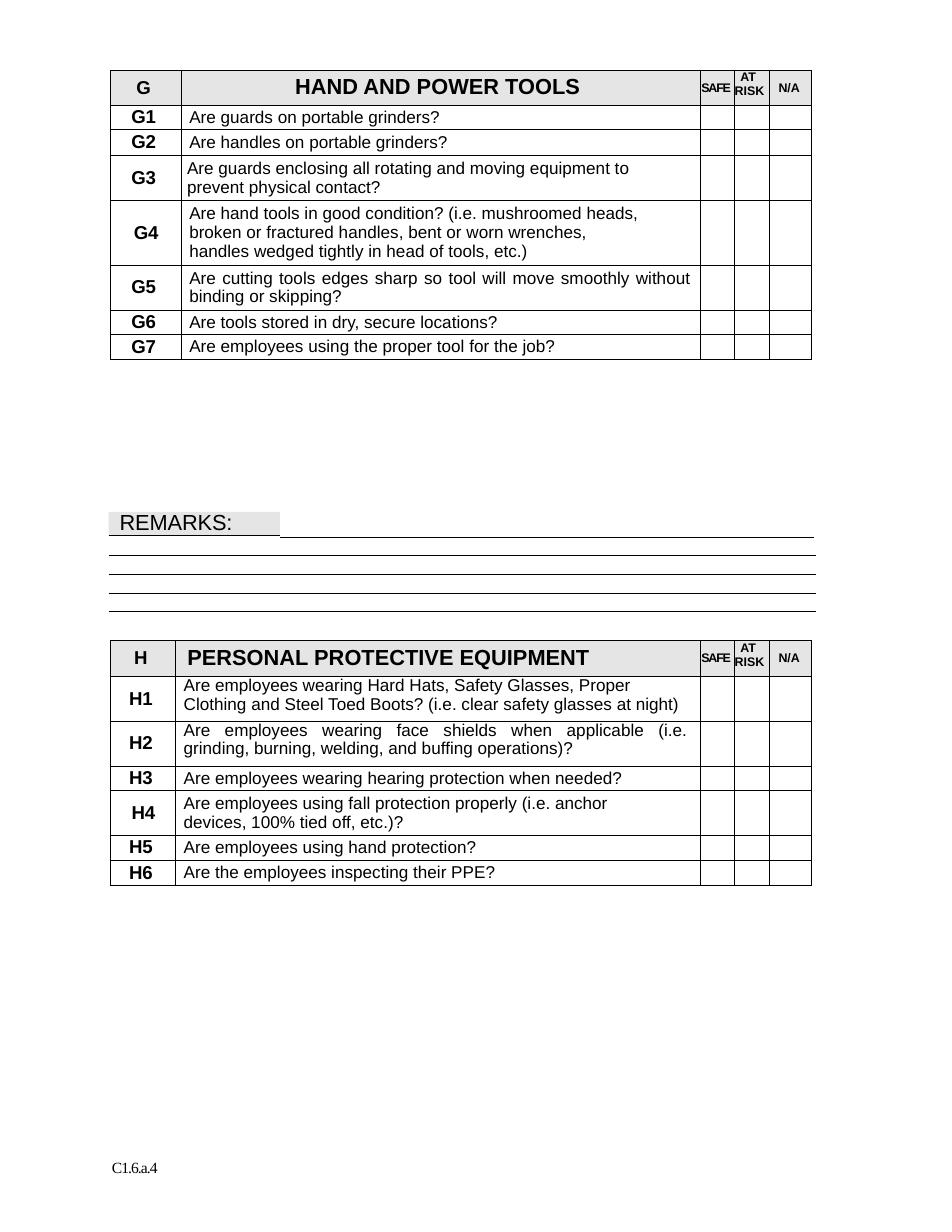
"""Build a safety checklist page with two inspection tables and a remarks area."""
from dataclasses import dataclass

from lxml import etree
from pptx import Presentation
from pptx import util as u
from pptx.dml.color import RGBColor
from pptx.enum import shapes, text
from pptx.oxml.ns import qn

COLS, ROWS = 850, 1100
ALIGN, ANCHOR = text.PP_ALIGN, text.MSO_ANCHOR


@dataclass(frozen=True)
class Style:
    size: float
    leading: float
    bold: bool = False
    spacing: float = 0
    font: str = "Arial"


@dataclass(frozen=True)
class Theme:
    ink: RGBColor = RGBColor(0, 0, 0)
    shade: RGBColor = RGBColor(0xE5, 0xE5, 0xE5)
    rule: float = 0.7
    code: Style = Style(12, 13, True, -0.2)
    title: Style = Style(14, 15, True)
    safe: Style = Style(8, 9, True, -0.8)
    risk: Style = Style(8, 9, True)
    na: Style = Style(8, 9, True, -0.1)
    question: Style = Style(11, 12)
    remarks: Style = Style(14, 14, spacing=-0.1)
    footer: Style = Style(10, 11, spacing=-0.6, font="Times New Roman")


@dataclass(frozen=True)
class Item:
    code: str
    question: str
    height: int = 22
    right: int = 0
    left: int = 7
    align: ALIGN = ALIGN.LEFT
    anchor: ANCHOR = ANCHOR.MIDDLE


@dataclass(frozen=True)
class Section:
    top: int
    code: str
    title: str
    title_align: ALIGN
    title_right: int
    header: int
    code_width: int
    items: tuple[Item, ...]


THEME = Theme()
TABLE_LEFT, TABLE_WIDTH, CHECK_WIDTHS = 99, 626, (31, 31, 38)
SECTIONS = (
    Section(63, "G ", "HAND AND POWER TOOLS ", ALIGN.CENTER, 0, 31, 63, (
        Item("G1 ", "Are guards on portable grinders?"),
        Item("G2 ", "Are handles on portable grinders?", 23),
        Item("G3 ", "Are guards enclosing all rotating and moving equipment to\n"
             "prevent physical contact?", 40, left=5),
        Item("G4", "Are hand tools in good condition? (i.e. mushroomed heads, broken or "
             "fractured handles, bent or worn wrenches, handles wedged tightly in head "
             "of tools, etc.)", 58, 50),
        Item("G5 ", "Are cutting tools edges sharp so tool will move smoothly without "
             "binding or skipping? ", 40, 8, align=ALIGN.JUSTIFY),
        Item("G6 ", "Are tools stored in dry, secure locations?"),
        Item("G7 ", "Are employees using the proper tool for the job?"))),
    Section(572, "H ", "PERSONAL PROTECTIVE EQUIPMENT ", ALIGN.RIGHT, 93, 32, 58, (
        Item("H1 ", "Are employees wearing Hard Hats, Safety Glasses, Proper Clothing and "
             "Steel Toed Boots? (i.e. clear safety glasses at night)", 40, 15,
             anchor=ANCHOR.TOP),
        Item("H2 ", "Are employees wearing face shields when applicable (i.e. grinding, "
             "burning, welding, and buffing operations)? ", 40, 11,
             align=ALIGN.JUSTIFY, anchor=ANCHOR.TOP),
        Item("H3 ", "Are employees wearing hearing protection when needed?"),
        Item("H4", "Are employees using fall protection properly (i.e. anchor devices, "
             "100% tied off, etc.)?", 40, 40),
        Item("H5 ", "Are employees using hand protection?"),
        Item("H6 ", "Are the employees inspecting their PPE?", 23))),
)
RULES = [(97, 729, row) for row in (496, 513, 530, 546)] + [(250, 727, 480), (97, 250, 478)]


def grid(units: float) -> u.Emu:
    """Return the length of a number of grid steps."""
    return u.Inches(units * 8.5 / COLS)


def write(tf, content: str, style: Style, align: ALIGN = ALIGN.LEFT) -> None:
    """Fill a text frame with text in one style."""
    tf.text = content
    tf.word_wrap = True
    for p in tf.paragraphs:
        p.alignment, p.line_spacing = align, u.Pt(style.leading)
        for r in p.runs:
            r.font.name, r.font.size, r.font.bold = style.font, u.Pt(style.size), style.bold
            r.font.color.rgb = THEME.ink
            r._r.get_or_add_rPr().set("spc", str(round(style.spacing * 100)))


def add_borders(cell) -> None:
    """Give a cell a thin line on all four sides."""
    tc_pr = cell._tc.get_or_add_tcPr()
    for side in ("lnL", "lnR", "lnT", "lnB"):
        ln = etree.SubElement(tc_pr, qn(f"a:{side}"), w=str(u.Pt(THEME.rule)))
        fill = etree.SubElement(ln, qn("a:solidFill"))
        etree.SubElement(fill, qn("a:srgbClr"), val=str(THEME.ink))


def fill_cell(cell, content: str, style: Style, align: ALIGN = ALIGN.CENTER,
              anchor: ANCHOR = ANCHOR.MIDDLE, left: int = 0, right: int = 0) -> None:
    """Write and place the text of one cell."""
    write(cell.text_frame, content, style, align)
    cell.vertical_anchor = anchor
    cell.margin_left, cell.margin_right = grid(left), grid(right)


def draw_section(s, section: Section) -> None:
    """Draw one checklist table."""
    heights = [section.header] + [item.height for item in section.items]
    widths = [section.code_width, TABLE_WIDTH - section.code_width - sum(CHECK_WIDTHS),
              *CHECK_WIDTHS]
    table = s.shapes.add_table(len(heights), len(widths), grid(TABLE_LEFT), grid(section.top),
                               grid(TABLE_WIDTH), grid(sum(heights))).table
    table.first_row = table.horz_banding = False
    for column, width in zip(table.columns, widths):
        column.width = grid(width)
    for i, (row, height) in enumerate(zip(table.rows, heights)):
        row.height = grid(height)
        for cell in row.cells:
            cell.margin_left = cell.margin_right = cell.margin_top = cell.margin_bottom = 0
            add_borders(cell)
            if i == 0:
                cell.fill.solid()
                cell.fill.fore_color.rgb = THEME.shade
            else:
                cell.fill.background()
    code, title, safe, risk, na = table.rows[0].cells
    fill_cell(code, section.code, THEME.code)
    fill_cell(title, section.title, THEME.title, section.title_align, right=section.title_right)
    fill_cell(safe, "SAFE ", THEME.safe)
    fill_cell(risk, "AT RISK", THEME.risk, ALIGN.LEFT, ANCHOR.TOP)
    risk.text_frame.paragraphs[0]._p.get_or_add_pPr().set("indent", str(grid(5)))
    fill_cell(na, "N/A ", THEME.na)
    for i, item in enumerate(section.items, 1):
        code, question, *checks = table.rows[i].cells
        fill_cell(code, item.code, THEME.code)
        fill_cell(question, item.question, THEME.question, item.align, item.anchor,
                  item.left, item.right)
        for cell in checks:
            p = cell.text_frame.paragraphs[0]
            etree.SubElement(p._p, qn("a:endParaRPr"), sz=str(THEME.risk.size * 100))


def draw_label(s, box: tuple[int, ...], content: str, style: Style, left: int = 0,
               shaded: bool = False) -> None:
    """Draw a line of text, with a shaded ground if asked."""
    sp = s.shapes.add_textbox(*map(grid, box))
    tf = sp.text_frame
    write(tf, content, style)
    tf.margin_left, tf.margin_top = grid(left), grid(1)
    tf.margin_right = tf.margin_bottom = 0
    if shaded:
        sp.fill.solid()
        sp.fill.fore_color.rgb = THEME.shade


def draw_rule(s, start: int, end: int, row: int) -> None:
    """Draw one horizontal writing line."""
    line = s.shapes.add_connector(shapes.MSO_CONNECTOR.STRAIGHT, grid(start), grid(row),
                                  grid(end), grid(row))
    line.line.color.rgb, line.line.width = THEME.ink, u.Pt(THEME.rule)
    etree.SubElement(line._element.spPr, qn("a:effectLst"))


def main() -> None:
    """Build the page and save it."""
    prs = Presentation()
    prs.slide_width, prs.slide_height = grid(COLS), grid(ROWS)
    s = prs.slides.add_slide(prs.slide_layouts[6])
    for section in SECTIONS:
        draw_section(s, section)
    draw_label(s, (97, 457, 153, 21), "REMARKS:", THEME.remarks, 10, True)
    draw_label(s, (100, 1034, 47, 17), "C1.6.a.4", THEME.footer)
    for rule in RULES:
        draw_rule(s, *rule)
    prs.save("out.pptx")


if __name__ == "__main__":
    main()
